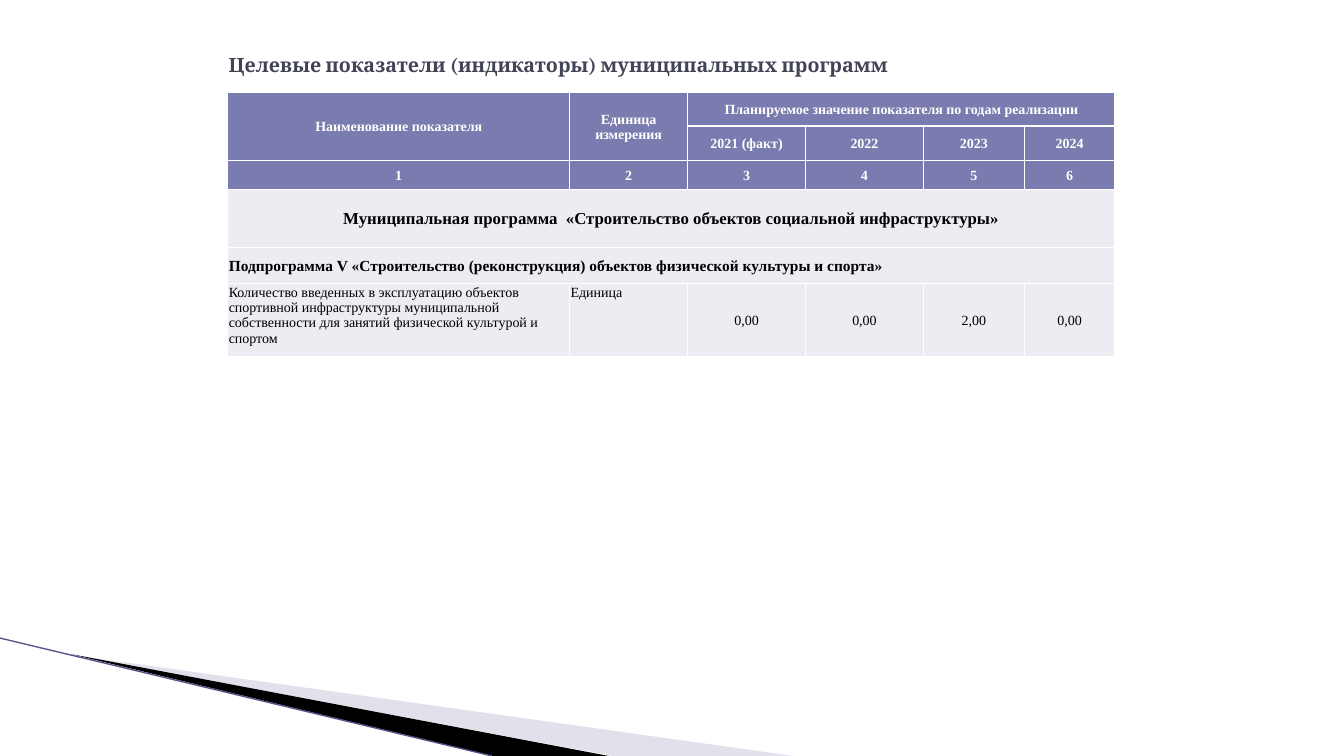
import pptx
import pptx.dml.color
import pptx.enum.shapes
import pptx.enum.text
import pptx.oxml
import pptx.oxml.ns
import pptx.util
from lxml import etree

Inches, Pt = pptx.util.Inches, pptx.util.Pt
RGBColor = pptx.dml.color.RGBColor
ALIGN, ANCHOR = pptx.enum.text.PP_ALIGN, pptx.enum.text.MSO_ANCHOR
qn = pptx.oxml.ns.qn

WHITE = RGBColor(0xFF, 0xFF, 0xFF)
BLACK = RGBColor(0, 0, 0)
TITLE_COLOR = RGBColor(0x42, 0x44, 0x56)
HEADER_FILL = RGBColor(0x7A, 0x7B, 0xAE)
BODY_FILL = RGBColor(0xEC, 0xEC, 0xF2)
PALE_WEDGE = RGBColor(0xB6, 0xB6, 0xD1)
EDGE_COLOR = RGBColor(0x53, 0x54, 0x8A)

# Content
TITLE = "Целевые показатели (индикаторы) муниципальных программ"
ROWS = [
    ["Наименование показателя", "Единица измерения",
     "Планируемое значение показателя по годам реализации", "", "", ""],
    ["", "", "2021 (факт)", "2022", "2023", "2024"],
    ["1", "2", "3", "4", "5", "6"],
    ["Муниципальная программа  «Строительство объектов социальной инфраструктуры»",
     "", "", "", "", ""],
    ["Подпрограмма V «Строительство (реконструкция) объектов физической культуры и спорта»",
     "", "", "", "", ""],
    ["Количество введенных в эксплуатацию объектов спортивной инфраструктуры "
     "муниципальной собственности для занятий физической культурой и спортом",
     "Единица", "0,00", "0,00", "2,00", "0,00"],
]
COLUMN_WIDTHS = [3.39, 1.17, 1.17, 1.17, 1, 0.9]
ROW_HEIGHTS = [0.33, 0.32, 0.29, 0.57, 0.36, 0.72]
MERGES = [((0, 0), (1, 0)), ((0, 1), (1, 1)), ((0, 2), (0, 5)),
          ((3, 0), (3, 5)), ((4, 0), (4, 5))]
HEADER = {"fill": HEADER_FILL, "color": WHITE, "size": 10, "bold": True}
BODY = {"fill": BODY_FILL, "color": BLACK, "size": 10, "bold": False}
ROW_STYLES = [HEADER] * 3 + [{**BODY, "size": 12, "bold": True},
                             {**BODY, "size": 11, "bold": True}, BODY]
LEFT_CELLS = {(4, 0), (5, 0), (5, 1)}
TOP_CELLS = {(5, 0), (5, 1)}

# Corner wedges: colour, opacity in percent, outline points
WEDGES = [
    (PALE_WEDGE, 40, [(0.73, 6.5), (7.87, 7.5), (6.08, 7.5)]),
    (BLACK, 100, [(0.71, 6.49), (6.04, 7.5), (4.89, 7.5)]),
]
EDGE = (0, 6.33, 4.88, 7.5)


def write(para, text, **formats):
    span = para.add_run()
    span.text = text
    span.font.color.rgb = formats.pop("color")
    for name, value in formats.items():
        setattr(span.font, name, value)


def set_borders(cell):
    props = cell._tc.get_or_add_tcPr()
    for index, side in enumerate(("a:lnL", "a:lnR", "a:lnT", "a:lnB")):
        line = etree.Element(qn(side), w=str(Pt(1)))
        fill = etree.SubElement(line, qn("a:solidFill"))
        etree.SubElement(fill, qn("a:srgbClr"), val=str(WHITE))
        props.insert(index, line)


deck = pptx.Presentation()
deck.slide_width, deck.slide_height = Inches(13.33), Inches(7.5)
page = deck.slides.add_slide(deck.slide_layouts[6])

# Corner decoration
for color, opacity, points in WEDGES:
    corners = [(Inches(x), Inches(y)) for x, y in points]
    builder = page.shapes.build_freeform(*corners[0])
    builder.add_line_segments(corners[1:], close=True)
    wedge = builder.convert_to_shape()
    wedge.shadow.inherit = False
    wedge.fill.solid()
    wedge.fill.fore_color.rgb = color
    wedge.line.fill.background()
    if opacity < 100:
        tone = wedge._element.spPr.find(qn("a:solidFill"))[0]
        etree.SubElement(tone, qn("a:alpha"), val=str(opacity * 1000))

edge = page.shapes.add_connector(pptx.enum.shapes.MSO_CONNECTOR.STRAIGHT,
                                 *(Inches(value) for value in EDGE))
edge.line.color.rgb = EDGE_COLOR
edge.line.width = Pt(0.95)
etree.SubElement(edge._element.spPr, qn("a:effectLst"))

# Title
box = page.shapes.add_textbox(Inches(2.17), Inches(0.3), Inches(9), Inches(0.69))
box.text_frame.word_wrap = True
box.text_frame.vertical_anchor = ANCHOR.MIDDLE
write(box.text_frame.paragraphs[0], TITLE, name="Cambria", size=Pt(14),
      bold=True, color=TITLE_COLOR)

# Indicator table
table = page.shapes.add_table(
    len(ROWS), len(COLUMN_WIDTHS), Inches(2.26), Inches(0.92),
    Inches(sum(COLUMN_WIDTHS)), Inches(sum(ROW_HEIGHTS))).table
for column, width in zip(table.columns, COLUMN_WIDTHS):
    column.width = Inches(width)
for row, height in zip(table.rows, ROW_HEIGHTS):
    row.height = Inches(height)

for r, (texts, style) in enumerate(zip(ROWS, ROW_STYLES)):
    for c, text in enumerate(texts):
        cell = table.cell(r, c)
        cell.margin_left = cell.margin_right = cell.margin_top = Inches(0.01)
        cell.margin_bottom = 0
        cell.vertical_anchor = ANCHOR.TOP if (r, c) in TOP_CELLS else ANCHOR.MIDDLE
        cell.fill.solid()
        cell.fill.fore_color.rgb = style["fill"]
        set_borders(cell)
        if text:
            para = cell.text_frame.paragraphs[0]
            para.alignment = ALIGN.LEFT if (r, c) in LEFT_CELLS else ALIGN.CENTER
            write(para, text, name="Times New Roman", size=Pt(style["size"]),
                  bold=style["bold"], color=style["color"])

for first, last in MERGES:
    table.cell(*first).merge(table.cell(*last))

deck.save("out.pptx")
